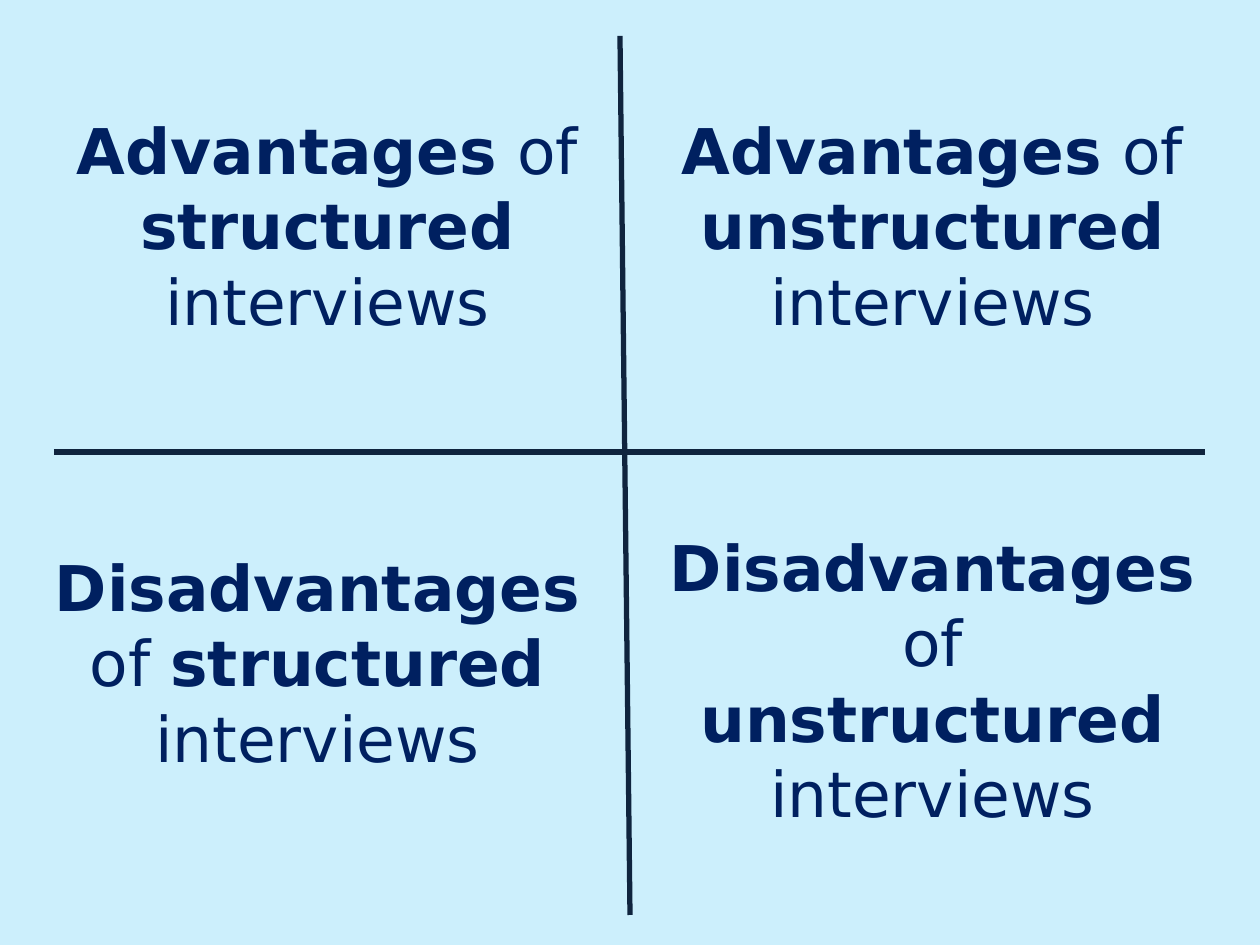
"""Build a four-quadrant slide on structured and unstructured interviews."""
from lxml import etree
from pptx import Presentation
from pptx import util as u
from pptx.dml.color import RGBColor
from pptx.enum import shapes, text
from pptx.oxml.ns import qn

PALE_BLUE = RGBColor(0xCC, 0xEF, 0xFC)
NAVY = RGBColor(0x00, 0x20, 0x60)
DARK_SLATE = RGBColor(0x0F, 0x24, 0x3E)


def px(length):
    return u.Emu(round(length * 914400 / 126))


class Board:
    def __init__(self, slide, font="DejaVu Sans", size=36, weight=3):
        self.slide = slide
        self.font = font
        self.size = u.Pt(size)
        self.weight = u.Pt(weight)

    def background(self, color):
        fill = self.slide.background.fill
        fill.solid()
        fill.fore_color.rgb = color

    def divider(self, x1, y1, x2, y2):
        divider = self.slide.shapes.add_connector(
            shapes.MSO_CONNECTOR.STRAIGHT, px(x1), px(y1), px(x2), px(y2))
        divider.line.color.rgb = DARK_SLATE
        divider.line.width = self.weight
        etree.SubElement(divider._element.spPr, qn("a:effectLst"))

    def quadrant(self, left, top, width, height, side, kind):
        frame = self.slide.shapes.add_textbox(
            px(left), px(top), px(width), px(height)).text_frame
        frame.word_wrap = True
        frame.auto_size = text.MSO_AUTO_SIZE.SHAPE_TO_FIT_TEXT
        heading = frame.paragraphs[0]
        heading.alignment = text.PP_ALIGN.CENTER
        for words, bold in ((side, True), (" of ", False),
                            (kind, True), (" interviews", False)):
            run = heading.add_run()
            run.text = words
            run.font.name = self.font
            run.font.size = self.size
            run.font.bold = bold
            run.font.color.rgb = NAVY


def main():
    deck = Presentation()
    deck.slide_width, deck.slide_height = px(1260), px(945)
    board = Board(deck.slides.add_slide(deck.slide_layouts[6]))
    board.background(PALE_BLUE)
    board.divider(620, 36, 630, 915)
    board.divider(54, 452, 1205, 452)
    board.quadrant(63, 105, 529, 242, "Advantages", "structured")
    board.quadrant(35, 542, 565, 242, "Disadvantages", "structured")
    board.quadrant(650, 522, 565, 318, "Disadvantages", "unstructured")
    board.quadrant(668, 105, 529, 242, "Advantages", "unstructured")
    deck.save("out.pptx")


if __name__ == "__main__":
    main()
